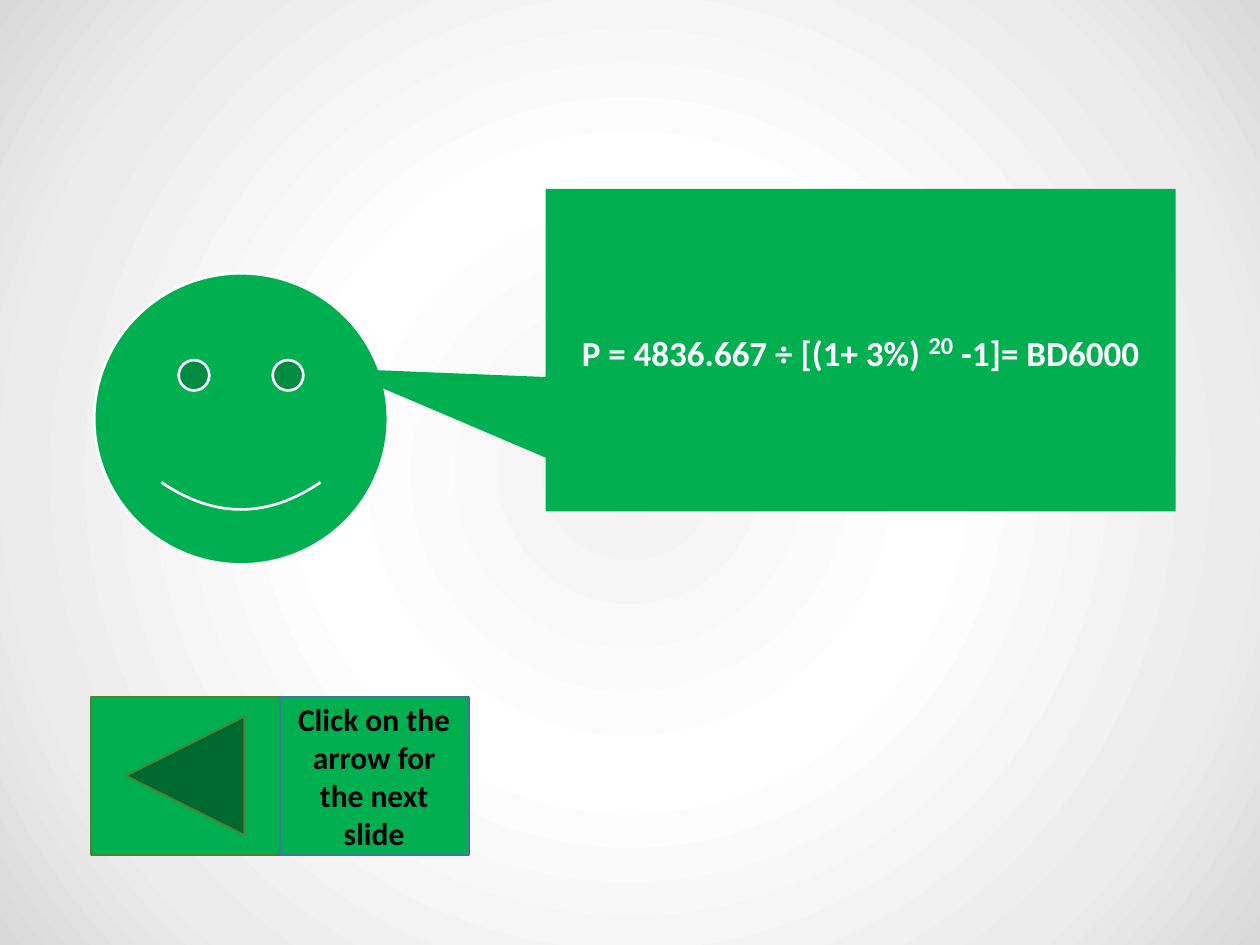
"""Build a slide with a smiling face, its spoken formula and a navigation button."""
from pptx import Presentation
from pptx import util as u
from pptx.dml.color import RGBColor
from pptx.enum import shapes, text
from pptx.oxml import parse_xml
from pptx.oxml.ns import nsdecls, qn

COLOURS = {
    "green": "00B050",
    "dark green": "548235",
    "blue": "43739E",
    "white": "FFFFFF",
    "black": "000000",
}
BACKDROP = {0: "F2F2F2", 39: "FFFFFF", 78: "ECECEC", 100: "D9D9D9"}


class SlideBuilder:
    """Hold the style and the current slide."""

    font = "Calibri"

    def __init__(self, slide):
        """Start on the given slide."""
        self.slide = slide

    def backdrop(self, stops):
        """Fill the background with a circular gradient."""
        self.slide.background.fill.gradient()
        gradient = self.slide.element.find(".//" + qn("a:gradFill"))
        stop_xml = "".join(
            f'<a:gs pos="{position * 1000}"><a:srgbClr val="{colour}"/></a:gs>'
            for position, colour in stops.items()
        )
        gradient.getparent().replace(gradient, parse_xml(
            f'<a:gradFill {nsdecls("a")} rotWithShape="1"><a:gsLst>{stop_xml}</a:gsLst>'
            '<a:path path="circle"><a:fillToRect l="50000" t="50000" r="50000" b="50000"/>'
            "</a:path></a:gradFill>"
        ))

    def shape(self, kind, box, line=None, width=1, adjustments=()):
        """Add a green preset shape, outlined when a line colour is given."""
        shape = self.slide.shapes.add_shape(kind, *(u.Cm(length) for length in box))
        shape.shadow.inherit = False
        shape.fill.solid()
        shape.fill.fore_color.rgb = RGBColor.from_string(COLOURS["green"])
        if line:
            shape.line.color.rgb = RGBColor.from_string(COLOURS[line])
            shape.line.width = u.Pt(width)
        else:
            shape.line.fill.background()
        for index, value in enumerate(adjustments):
            shape.adjustments[index] = value
        return shape

    def label(self, shape, paragraphs, colour):
        """Set paragraphs given as lists of (wording, size, baseline) runs."""
        frame = shape.text_frame
        frame.word_wrap = True
        frame.vertical_anchor = text.MSO_ANCHOR.MIDDLE
        for index, runs in enumerate(paragraphs):
            paragraph = frame.add_paragraph() if index else frame.paragraphs[0]
            paragraph.alignment = text.PP_ALIGN.CENTER
            for wording, size, baseline in runs:
                run = paragraph.add_run()
                run.text = wording
                run.font.name = self.font
                run.font.size = u.Pt(size)
                run.font.bold = True
                run.font.color.rgb = RGBColor.from_string(COLOURS[colour])
                if baseline:
                    run._r.get_or_add_rPr().set("baseline", str(baseline * 1000))

    def flip(self, shape):
        """Mirror a shape from left to right."""
        shape.element.spPr.find(qn("a:xfrm")).set("flipH", "1")


def main():
    """Compose and save the slide."""
    presentation = Presentation()
    presentation.slide_width, presentation.slide_height = u.Cm(25.4), u.Cm(19.05)
    builder = SlideBuilder(presentation.slides.add_slide(presentation.slide_layouts[6]))
    kinds = shapes.MSO_SHAPE

    builder.backdrop(BACKDROP)
    builder.shape(kinds.SMILEY_FACE, (1.9, 5.51, 5.92, 5.87), "white", 1.5, [0.047])

    left, top, width, height = 1.83, 14.05, 3.81, 3.18
    builder.shape(kinds.ACTION_BUTTON_BACK_OR_PREVIOUS, (left, top, width, height), "dark green")

    speech = builder.shape(
        kinds.RECTANGULAR_CALLOUT, (11, 3.81, 12.7, 6.5), adjustments=[-0.832, 0.057]
    )
    formula = [("P = 4836.667 ÷ [(1+ 3%) ", 20, 0), ("20", 24, 30), (" -1]= BD6000", 20, 0)]
    builder.label(speech, [formula], "white")

    hint = builder.shape(
        kinds.PENTAGON, (left + width, top, width, height), "blue", adjustments=[0]
    )
    builder.flip(hint)
    builder.label(
        hint, [[("Click on the arrow for the next", 18, 0)], [("slide", 18, 0)]], "black"
    )
    presentation.save("out.pptx")


if __name__ == "__main__":
    main()
